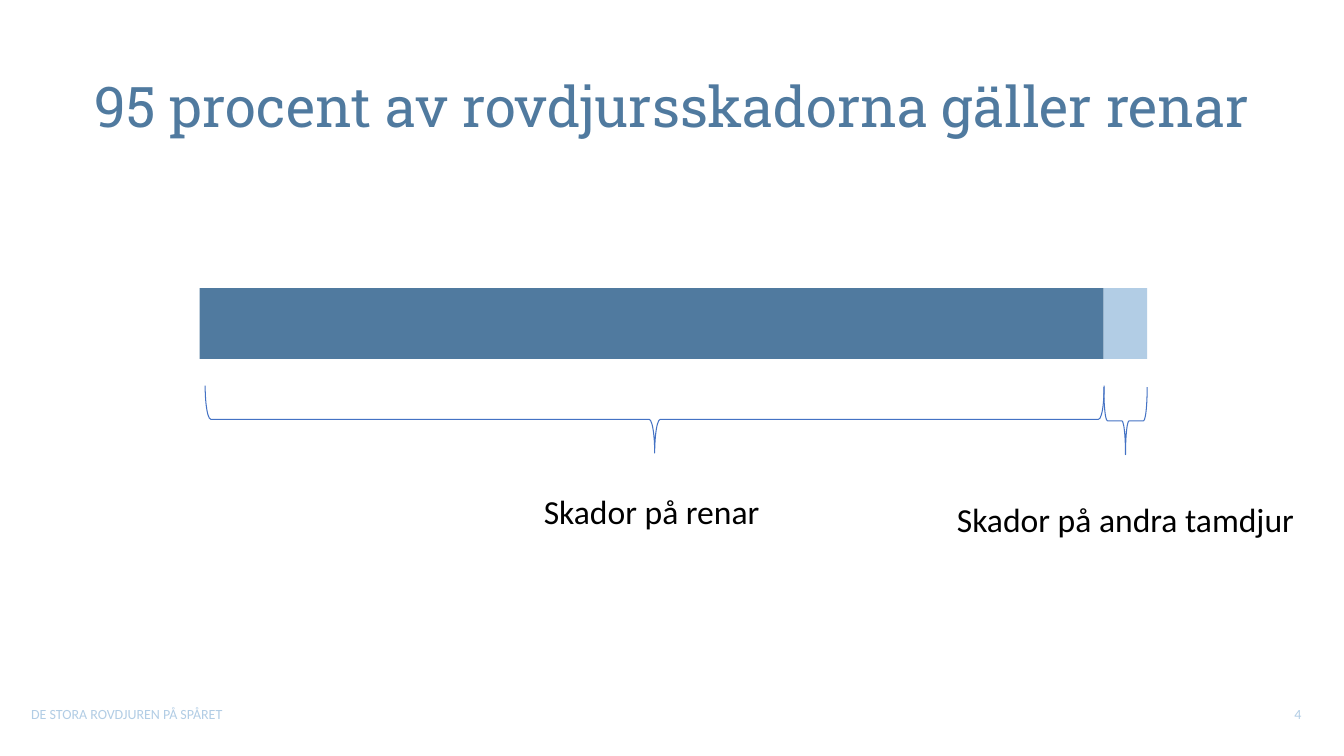
from pptx import Presentation
from pptx.dml.color import RGBColor
from pptx.enum.shapes import MSO_SHAPE as Shape
from pptx.enum.text import MSO_ANCHOR as Anchor, PP_ALIGN as Align
from pptx.util import Pt

DARK_BLUE = "507A9F"
LIGHT_BLUE = "B2CDE5"
BRACE_BLUE = "4472C4"
BLACK = "000000"

BAR_LEFT, BAR_TOP, BAR_HEIGHT = 142.6, 205.9, 50.4
REINDEER_WIDTH, OTHER_WIDTH = 645.8, 31
BRACE_HEIGHT = 48.2


def color(hex_string):
    return RGBColor.from_string(hex_string)


def add_text(slide, text, left, top, width, height, size, hex_color,
             font="Calibri", align=Align.LEFT, anchor=Anchor.TOP,
             line_spacing=1.0, space_before=0):
    box = slide.shapes.add_textbox(Pt(left), Pt(top), Pt(width), Pt(height))
    frame = box.text_frame
    frame.word_wrap = True
    frame.vertical_anchor = anchor
    paragraph = frame.paragraphs[0]
    paragraph.alignment = align
    paragraph.line_spacing = line_spacing
    paragraph.space_before = Pt(space_before)
    run = paragraph.add_run()
    run.text = text
    run.font.size = Pt(size)
    run.font.name = font
    run.font.color.rgb = color(hex_color)


def add_label(slide, text, left, top, width, height):
    add_text(slide, text, left, top, width, height, 24, BLACK,
             align=Align.CENTER, anchor=Anchor.MIDDLE,
             line_spacing=0.9, space_before=10)


def add_bar(slide, left, width, hex_color):
    bar = slide.shapes.add_shape(
        Shape.RECTANGLE, Pt(left), Pt(BAR_TOP), Pt(width), Pt(BAR_HEIGHT))
    bar.shadow.inherit = False
    bar.fill.solid()
    bar.fill.fore_color.rgb = color(hex_color)
    bar.line.fill.background()


def add_brace_below(slide, left, top, width):
    """Place a brace pointing down; left, top and width are as seen after rotation."""
    shift = (width - BRACE_HEIGHT) / 2
    brace = slide.shapes.add_shape(
        Shape.RIGHT_BRACE, Pt(left + shift), Pt(top - shift),
        Pt(BRACE_HEIGHT), Pt(width))
    brace.rotation = 90
    brace.shadow.inherit = False
    brace.fill.background()
    brace.line.color.rgb = color(BRACE_BLUE)
    brace.line.width = Pt(0.75)


def main():
    presentation = Presentation()
    presentation.slide_width = Pt(960)
    presentation.slide_height = Pt(540)
    slide = presentation.slides.add_slide(presentation.slide_layouts[6])

    add_text(slide, "95 procent av rovdjursskadorna gäller renar",
             0, 28.8, 960, 98.6, 40, DARK_BLUE, font="Roboto Slab",
             align=Align.CENTER, anchor=Anchor.MIDDLE, line_spacing=0.9)
    add_text(slide, "DE STORA ROVDJUREN PÅ SPÅRET",
             15.1, 500.4, 324, 28.8, 10, LIGHT_BLUE)
    add_text(slide, "4", 720.7, 500.4, 216, 28.8, 10, LIGHT_BLUE,
             align=Align.RIGHT)

    other_left = BAR_LEFT + REINDEER_WIDTH
    add_bar(slide, BAR_LEFT, REINDEER_WIDTH, DARK_BLUE)
    add_bar(slide, other_left, OTHER_WIDTH, LIGHT_BLUE)
    add_brace_below(slide, 146.5, 275.4, 642.2)
    add_brace_below(slide, other_left, 276.5, OTHER_WIDTH)
    add_label(slide, "Skador på renar", 320.4, 342.7, 290.2, 48.2)
    add_label(slide, "Skador på andra tamdjur", 658.8, 323.3, 290.2, 98.6)

    presentation.save("out.pptx")


if __name__ == "__main__":
    main()
